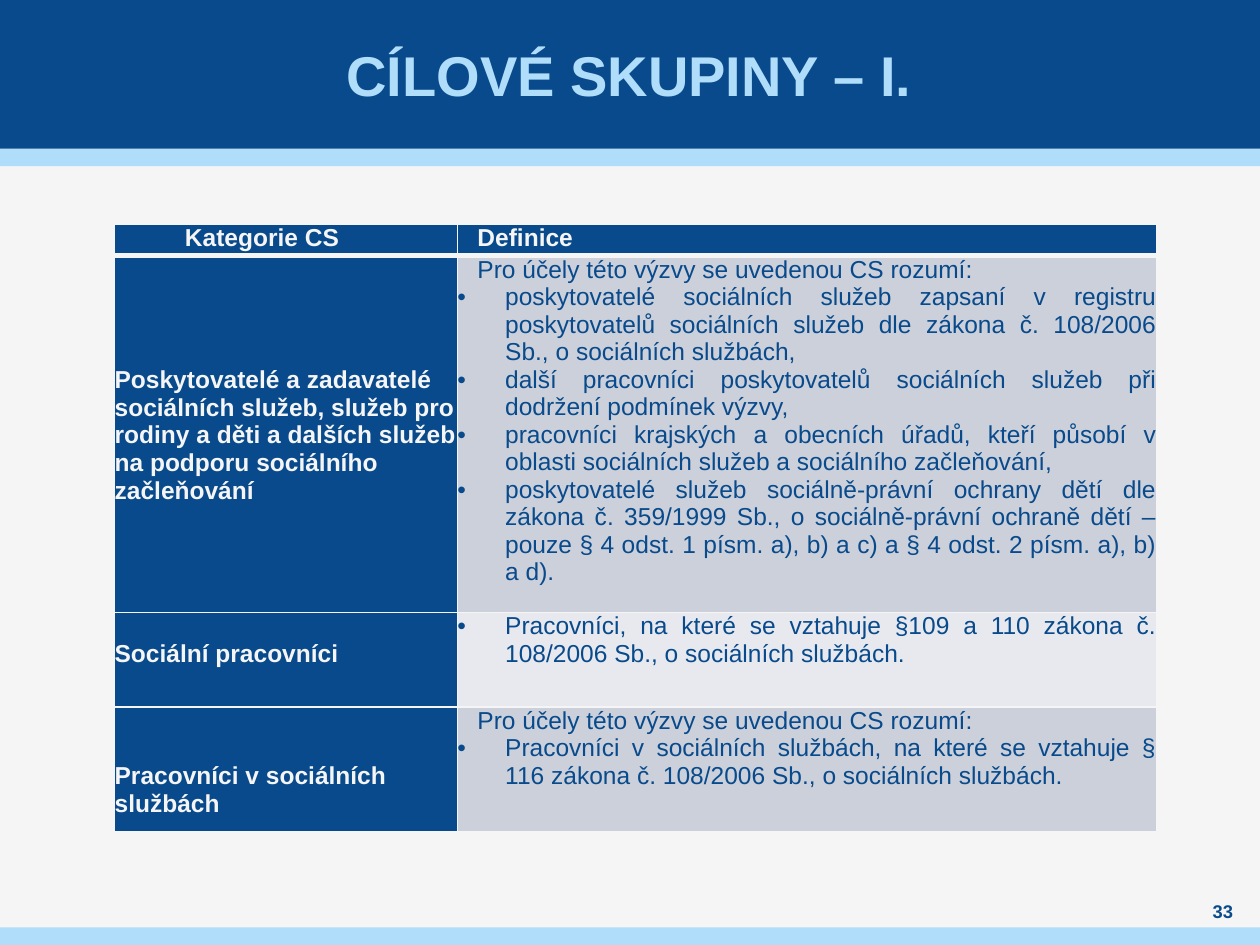
from lxml import etree
from pptx import Presentation
from pptx.dml.color import RGBColor
from pptx.enum import shapes, text
from pptx.oxml.ns import qn
from pptx.util import Inches, Pt

HUES = {"navy": "084A8B", "sky": "AFDDFA", "pale": "F5F5F5",
        "dark": "CCD0DA", "light": "E7E9EE"}
FONT = "Arial"
TITLE = "CÍLOVÉ SKUPINY – I."
PAGE = "33"
HEADS = ["Kategorie CS", "Definice"]
INTRO = "Pro účely této výzvy se uvedenou CS rozumí: "
GROUPS = [
    ("Poskytovatelé a zadavatelé sociálních služeb, služeb pro rodiny a děti "
     "a dalších služeb na podporu sociálního začleňování", 4, INTRO,
     ["poskytovatelé sociálních služeb zapsaní v registru poskytovatelů "
      "sociálních služeb dle zákona č. 108/2006 Sb., o sociálních službách,",
      "další pracovníci poskytovatelů sociálních služeb při dodržení podmínek výzvy, ",
      "pracovníci krajských a obecních úřadů, kteří působí v oblasti "
      "sociálních služeb a sociálního začleňování,",
      "poskytovatelé služeb sociálně-právní ochrany dětí dle zákona č. 359/1999 Sb., "
      "o sociálně-právní ochraně dětí – pouze § 4 odst. 1 písm. a), b) a c) "
      "a § 4 odst. 2 písm. a), b) a d)."]),
    ("Sociální pracovníci", 1, None,
     ["Pracovníci, na které se vztahuje §109 a 110 zákona č. 108/2006 Sb., "
      "o sociálních službách."]),
    ("Pracovníci v sociálních službách", 2, INTRO,
     ["Pracovníci v sociálních službách, na které se vztahuje § 116 zákona "
      "č. 108/2006 Sb., o sociálních službách."]),
]
BANDS = [(1.18, 0.14, "sky"), (0, 1.18, "navy"), (7.36, 0.14, "sky")]
COLS = [2.72, 5.55]
ROWS = [0.25, 2.83, 0.75, 0.99]
LINE = 0.22
INDENT = 0.16
HANG = 0.38


def color(name):
    return RGBColor.from_string(HUES[name])


def style(para, size, hue, bold, align):
    para.alignment = align
    for run in para.runs:
        font = run.font
        font.name, font.size, font.bold = FONT, Pt(size), bold
        font.color.rgb = color(hue)


def pad(frame, left=0, right=0):
    frame.margin_left, frame.margin_right = Inches(left), Inches(right)
    frame.margin_top = frame.margin_bottom = 0


def indent(para, left, first=0):
    props = para._p.get_or_add_pPr()
    props.set("marL", str(Inches(left)))
    props.set("indent", str(Inches(first)))
    if first:
        etree.SubElement(props, qn("a:buFont"), typeface=FONT)
        etree.SubElement(props, qn("a:buChar"), char="•")


def dress(cell, hue, base=1):
    pad(cell)
    props = cell._tc.get_or_add_tcPr()
    for side, width in (("L", 1), ("R", 1), ("T", 1), ("B", base)):
        edge = etree.SubElement(props, qn("a:ln" + side), w=str(Pt(width)))
        fill = etree.SubElement(edge, qn("a:solidFill"))
        etree.SubElement(fill, qn("a:srgbClr"), val=HUES["pale"])
    cell.fill.solid()
    cell.fill.fore_color.rgb = color(hue)


def define(cell, intro, items):
    lines = ([intro] if intro else []) + items
    cell.text_frame.text = "\n".join(lines)
    for line, para in zip(lines, cell.text_frame.paragraphs):
        style(para, 14, "navy", False, text.PP_ALIGN.JUSTIFY)
        if line == intro:
            indent(para, INDENT)
        else:
            indent(para, HANG, -HANG)


def build():
    deck = Presentation()
    deck.slide_width, deck.slide_height = Inches(10), Inches(7.5)
    slide = deck.slides.add_slide(deck.slide_layouts[5])
    slide.background.fill.solid()
    slide.background.fill.fore_color.rgb = color("pale")

    for top, high, hue in BANDS:
        band = slide.shapes.add_shape(shapes.MSO_SHAPE.RECTANGLE, 0, Inches(top),
                                      deck.slide_width, Inches(high))
        band.shadow.inherit = False
        band.fill.solid()
        band.fill.fore_color.rgb = color(hue)
        band.line.fill.background()

    title = slide.shapes.title
    title.left, title.top = Inches(0.39), 0
    title.width, title.height = Inches(9.21), Inches(1.18)
    title.text_frame.text = TITLE
    title.text_frame.vertical_anchor = text.MSO_ANCHOR.MIDDLE
    pad(title.text_frame, 0.04, 0.04)
    style(title.text_frame.paragraphs[0], 32, "sky", True, text.PP_ALIGN.CENTER)
    slide.shapes._spTree.append(title._element)

    table = slide.shapes.add_table(len(ROWS), len(COLS), Inches(0.91), Inches(1.78),
                                   Inches(sum(COLS)), Inches(sum(ROWS))).table
    for col, wide in zip(table.columns, COLS):
        col.width = Inches(wide)
    for row, high in zip(table.rows, ROWS):
        row.height = Inches(high)

    aligns = [text.PP_ALIGN.CENTER, text.PP_ALIGN.JUSTIFY]
    for col, (head, align) in enumerate(zip(HEADS, aligns)):
        cell = table.cell(0, col)
        dress(cell, "navy", 3)
        cell.text_frame.text = head
        style(cell.text_frame.paragraphs[0], 14, "pale", True, align)
    table.cell(0, 0).margin_right = Inches(HANG)
    indent(table.cell(0, 1).text_frame.paragraphs[0], INDENT)

    for row, (name, skip, intro, items) in enumerate(GROUPS, 1):
        label, cell = table.cell(row, 0), table.cell(row, 1)
        dress(label, "navy")
        dress(cell, "dark" if row % 2 else "light")
        label.margin_top = Inches(skip * LINE)
        label.text_frame.text = name
        style(label.text_frame.paragraphs[0], 14, "pale", True, text.PP_ALIGN.LEFT)
        define(cell, intro, items)

    frame = slide.shapes.add_textbox(Inches(9.45), Inches(7.13),
                                     Inches(0.51), Inches(0.2)).text_frame
    frame.word_wrap = True
    frame.vertical_anchor = text.MSO_ANCHOR.MIDDLE
    pad(frame)
    frame.text = PAGE
    style(frame.paragraphs[0], 10.5, "navy", True, text.PP_ALIGN.CENTER)
    deck.save("out.pptx")


if __name__ == "__main__":
    build()
